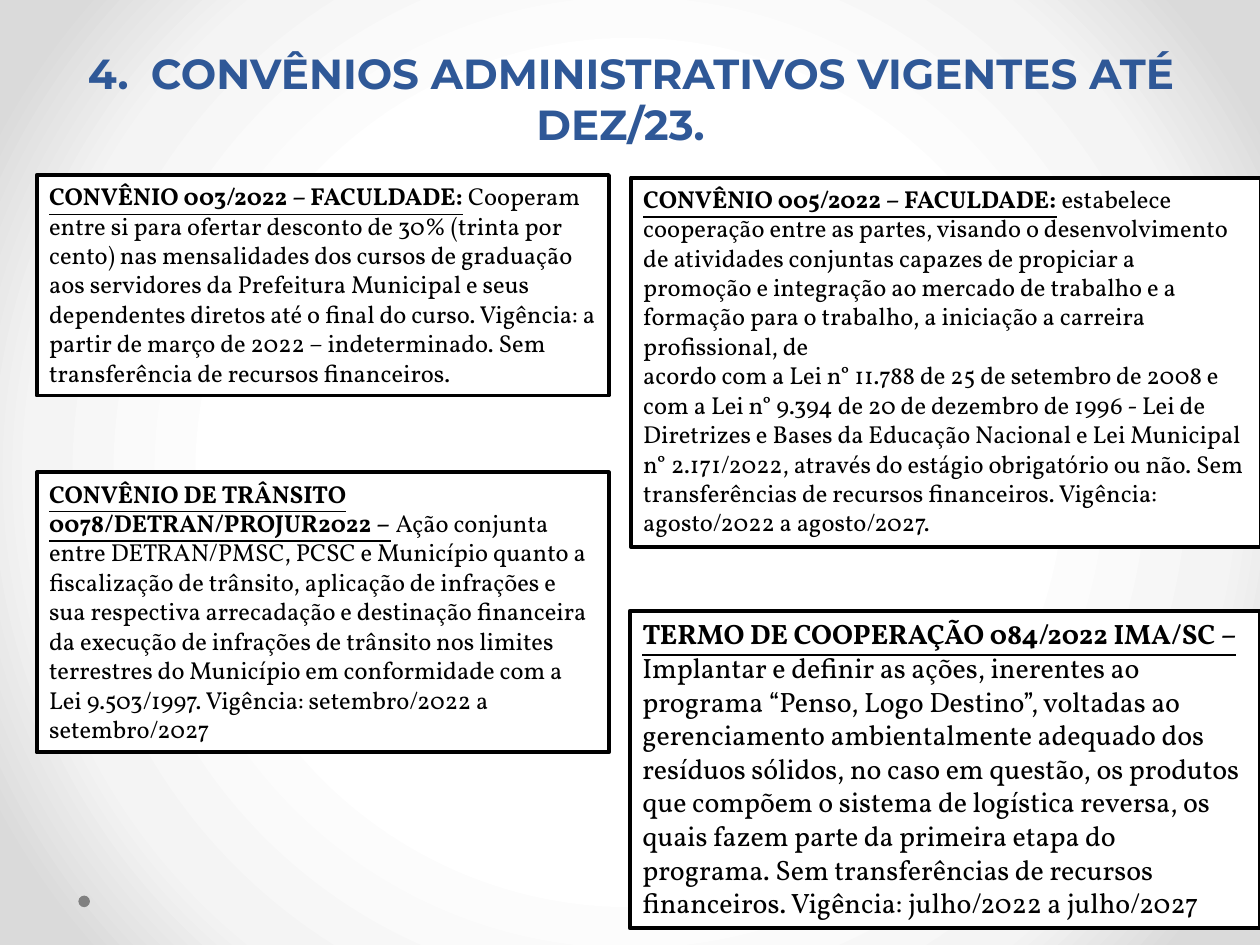
import pptx
import pptx.dml.color
import pptx.enum.shapes
import pptx.enum.text
import pptx.oxml
import pptx.oxml.ns
import pptx.util

Pt = pptx.util.Pt
RGB = pptx.dml.color.RGBColor.from_string
COLORS = {"title": "2F5897", "ink": "000000", "box": "FFFFFF", "dot": "808080"}
STOPS = [(50, "FFFFFF"), (76, "F4F4F4"), (92, "DADADA")]

AGREEMENTS = [
    ((21, 270, 327, 160), 14, "CONVÊNIO DE TRÂNSITO 0078/DETRAN/PROJUR2022 –", [
        " Ação conjunta entre DETRAN/PMSC, PCSC e Município quanto a fiscalização de "
        "trânsito, aplicação de infrações e sua respectiva arrecadação e destinação "
        "financeira da execução de infrações de trânsito nos limites terrestres do "
        "Município em conformidade com a Lei 9.503/1997. Vigência: setembro/2022 a "
        "setembro/2027"]),
    ((21, 100, 327, 126), 14, "CONVÊNIO 003/2022 – FACULDADE:", [
        " Cooperam entre si para ofertar desconto de 30% (trinta por cento) nas "
        "mensalidades dos cursos de graduação aos servidores da Prefeitura Municipal e "
        "seus dependentes diretos até o final do curso. Vigência: a partir de março de "
        "2022 – indeterminado. Sem transferência de recursos financeiros."]),
    ((360.5, 101.5, 360, 211), 14, "CONVÊNIO 005/2022 – FACULDADE:", [
        " estabelece cooperação entre as partes, visando o desenvolvimento de atividades "
        "conjuntas capazes de propiciar a promoção e integração ao mercado de trabalho e "
        "a formação para o trabalho, a iniciação a carreira profissional, de",
        "acordo com a Lei n° 11.788 de 25 de setembro de 2008 e com a Lei n° 9.394 de 20 "
        "de dezembro de 1996 - Lei de Diretrizes e Bases da Educação Nacional e Lei "
        "Municipal n° 2.171/2022, através do estágio obrigatório ou não. Sem "
        "transferências de recursos financeiros. Vigência: agosto/2022 a agosto/2027."]),
    ((360, 349, 360, 181.5), 16, "TERMO DE COOPERAÇÃO 084/2022 IMA/SC – ", [
        "Implantar e definir as ações, inerentes ao programa “Penso, Logo Destino”, "
        "voltadas ao gerenciamento ambientalmente adequado dos resíduos sólidos, no caso "
        "em questão, os produtos que compõem o sistema de logística reversa, os quais "
        "fazem parte da primeira etapa do programa. Sem transferências de recursos "
        "financeiros. Vigência: julho/2022 a julho/2027"]),
]


def add_run(p, text, color, **font):
    r = p.add_run()
    r.text = text
    for name, value in font.items():
        setattr(r.font, name, value)
    r.font.color.rgb = RGB(color)


def set_background(s):
    """Fill the slide with a gradient that runs from its centre outwards."""
    stops = "".join(f'<a:gs pos="{pos * 1000}"><a:srgbClr val="{color}"/></a:gs>'
                    for pos, color in STOPS)
    grad = pptx.oxml.parse_xml(
        f'<a:gradFill {pptx.oxml.ns.nsdecls("a")} rotWithShape="1"><a:gsLst>{stops}</a:gsLst>'
        '<a:path path="circle"><a:fillToRect l="50000" t="50000" r="50000" b="50000"/>'
        '</a:path></a:gradFill>')
    fill = s.background.fill
    fill.gradient()
    old = s.element.find(".//" + pptx.oxml.ns.qn("a:gradFill"))
    old.getparent().replace(old, grad)


def place_title(s, box, text):
    sp = s.shapes.title
    for name, value in zip(("left", "top", "width", "height"), box):
        setattr(sp, name, Pt(value))
    tf = sp.text_frame
    tf.auto_size = pptx.enum.text.MSO_AUTO_SIZE.NONE
    tf.vertical_anchor = pptx.enum.text.MSO_ANCHOR.BOTTOM
    p = tf.paragraphs[0]
    p.alignment = pptx.enum.text.PP_ALIGN.CENTER
    add_run(p, text, COLORS["title"], name="Montserrat", size=Pt(24), bold=True)


def add_filled(s, kind, box, color):
    sp = s.shapes.add_shape(kind, *(Pt(v) for v in box))
    sp.shadow.inherit = False
    sp.fill.solid()
    sp.fill.fore_color.rgb = RGB(color)
    sp.line.fill.background()
    return sp


def add_agreement(s, box, size, heading, paragraphs):
    """Add a framed box whose first paragraph opens with an underlined heading."""
    sp = add_filled(s, pptx.enum.shapes.MSO_SHAPE.RECTANGLE, box, COLORS["box"])
    sp.line.color.rgb = RGB(COLORS["ink"])
    sp.line.width = Pt(2.25)
    tf = sp.text_frame
    tf.word_wrap = True
    tf.auto_size = pptx.enum.text.MSO_AUTO_SIZE.SHAPE_TO_FIT_TEXT
    tf.vertical_anchor = pptx.enum.text.MSO_ANCHOR.TOP
    font = {"name": "Vollkorn", "size": Pt(size)}
    for i, text in enumerate(paragraphs):
        p = tf.add_paragraph() if i else tf.paragraphs[0]
        p.alignment = pptx.enum.text.PP_ALIGN.LEFT
        if i == 0:
            add_run(p, heading, COLORS["ink"], bold=True, underline=True, **font)
        add_run(p, text, COLORS["ink"], **font)


def main():
    prs = pptx.Presentation()
    prs.slide_width, prs.slide_height = Pt(720), Pt(540)
    s = prs.slides.add_slide(prs.slide_layouts[5])
    set_background(s)
    add_filled(s, pptx.enum.shapes.MSO_SHAPE.OVAL, (44.8, 511.8, 6.6, 6.6), COLORS["dot"])
    place_title(s, (29, 21, 663, 67.5), "4.\tCONVÊNIOS ADMINISTRATIVOS VIGENTES ATÉ DEZ/23.\t")
    for agreement in AGREEMENTS:
        add_agreement(s, *agreement)
    prs.save("out.pptx")


if __name__ == "__main__":
    main()
